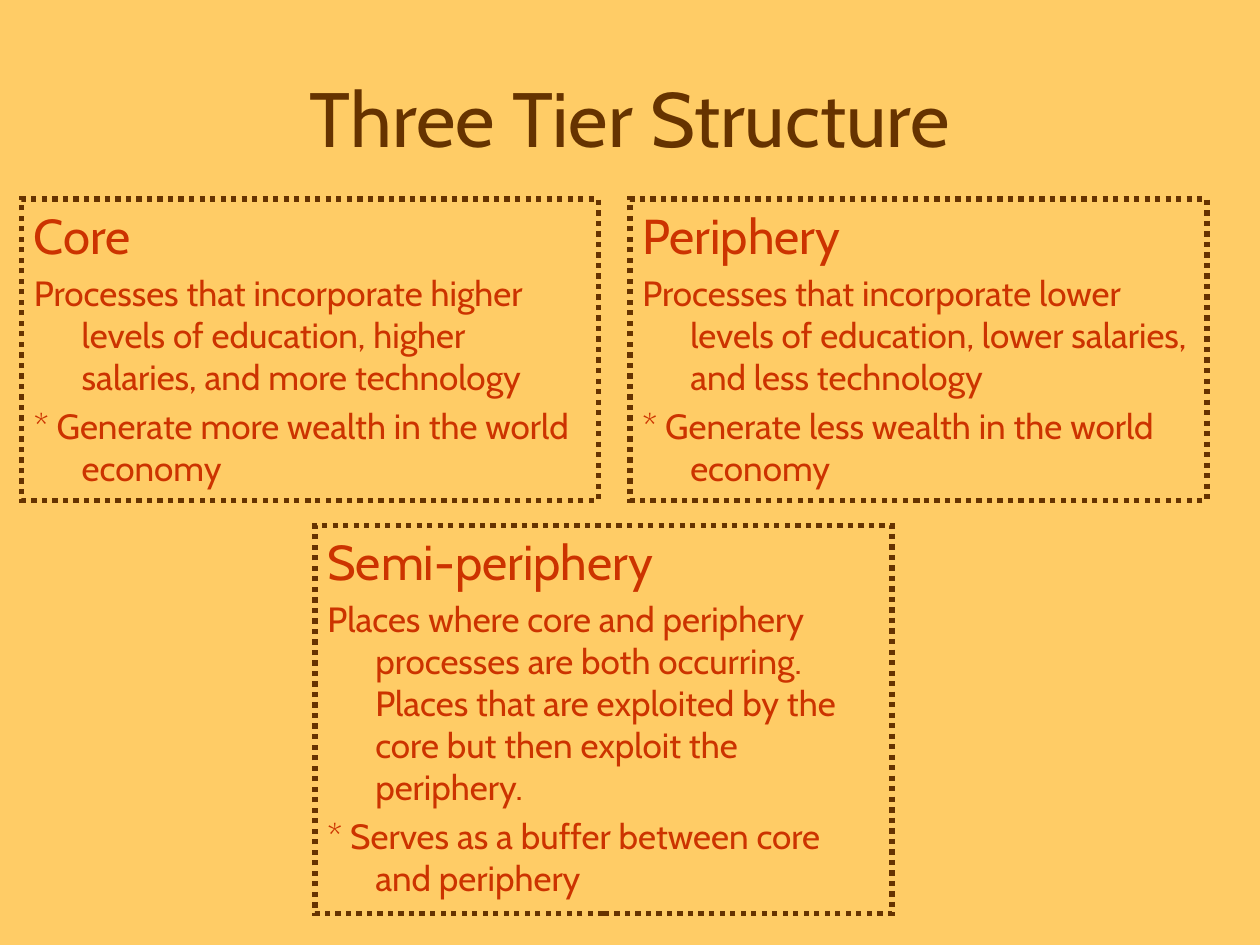
from dataclasses import dataclass

from pptx import Presentation
from pptx import util as u
from pptx.dml.color import RGBColor
from pptx.enum import dml, shapes, text
from pptx.oxml import ns
from lxml import etree

SAND = RGBColor(0xFF, 0xCC, 0x66)
BROWN = RGBColor(0x66, 0x33, 0x00)
RUST = RGBColor(0xCC, 0x33, 0x00)
FONT = "Cabin"
WIDTH = 4.58
HANG = u.Inches(0.38)


@dataclass
class Tier:
    left: float
    top: float
    height: float
    name: str
    notes: tuple[str, ...]


TIERS = [
    Tier(0.17, 1.58, 2.39, "Core", (
        "Processes that incorporate higher levels of education, "
        "higher salaries, and more technology",
        "* Generate more wealth in the world economy",
    )),
    Tier(2.5, 4.17, 3.08, "Semi-periphery", (
        "Places where core and periphery processes are both occurring. "
        "Places that are exploited by the core but then exploit the periphery.",
        "* Serves as a buffer between core and periphery",
    )),
    Tier(5, 1.58, 2.39, "Periphery", (
        "Processes that incorporate lower levels of education, "
        "lower salaries, and less technology",
        "* Generate less wealth in the world economy",
    )),
]


def add_run(para, words: str, size: int, color: RGBColor) -> None:
    run = para.add_run()
    run.text = words
    run.font.name = FONT
    run.font.size = u.Pt(size)
    run.font.color.rgb = color


def add_line(para, words: str, size: int, gap: int) -> None:
    para.alignment = text.PP_ALIGN.LEFT
    para.space_before = u.Pt(gap)
    props = para._p.get_or_add_pPr()
    props.set("marL", str(HANG))
    props.set("indent", str(-HANG))
    add_run(para, words, size, RUST)


def draw_title(slide, words: str) -> None:
    title = slide.shapes.title
    title.left, title.top = u.Inches(0.5), u.Inches(0.3)
    title.width, title.height = u.Inches(9), u.Inches(1.25)
    frame = title.text_frame
    frame.vertical_anchor = text.MSO_ANCHOR.MIDDLE
    para = frame.paragraphs[0]
    para.alignment = text.PP_ALIGN.CENTER
    add_run(para, words, 44, BROWN)


def draw_edge(line) -> None:
    line.color.rgb = BROWN
    line.width = u.Pt(3)
    line.dash_style = dml.MSO_LINE.ROUND_DOT
    join = etree.SubElement(line._get_or_add_ln(), ns.qn("a:miter"))
    join.set("lim", "800000")


def draw_tier(slide, tier: Tier) -> None:
    box = slide.shapes.add_shape(
        shapes.MSO_SHAPE.RECTANGLE, u.Inches(tier.left), u.Inches(tier.top),
        u.Inches(WIDTH), u.Inches(tier.height))
    box.shadow.inherit = False
    box.fill.background()
    draw_edge(box.line)
    frame = box.text_frame
    frame.word_wrap = True
    frame.vertical_anchor = text.MSO_ANCHOR.TOP
    add_line(frame.paragraphs[0], tier.name, 28, 0)
    for note in tier.notes:
        add_line(frame.add_paragraph(), note, 20, 4)


def main() -> None:
    deck = Presentation()
    deck.slide_width, deck.slide_height = u.Inches(10), u.Inches(7.5)
    slide = deck.slides.add_slide(deck.slide_layouts[5])
    slide.background.fill.solid()
    slide.background.fill.fore_color.rgb = SAND
    draw_title(slide, "Three Tier Structure")
    for tier in TIERS:
        draw_tier(slide, tier)
    deck.save("out.pptx")


if __name__ == "__main__":
    main()
